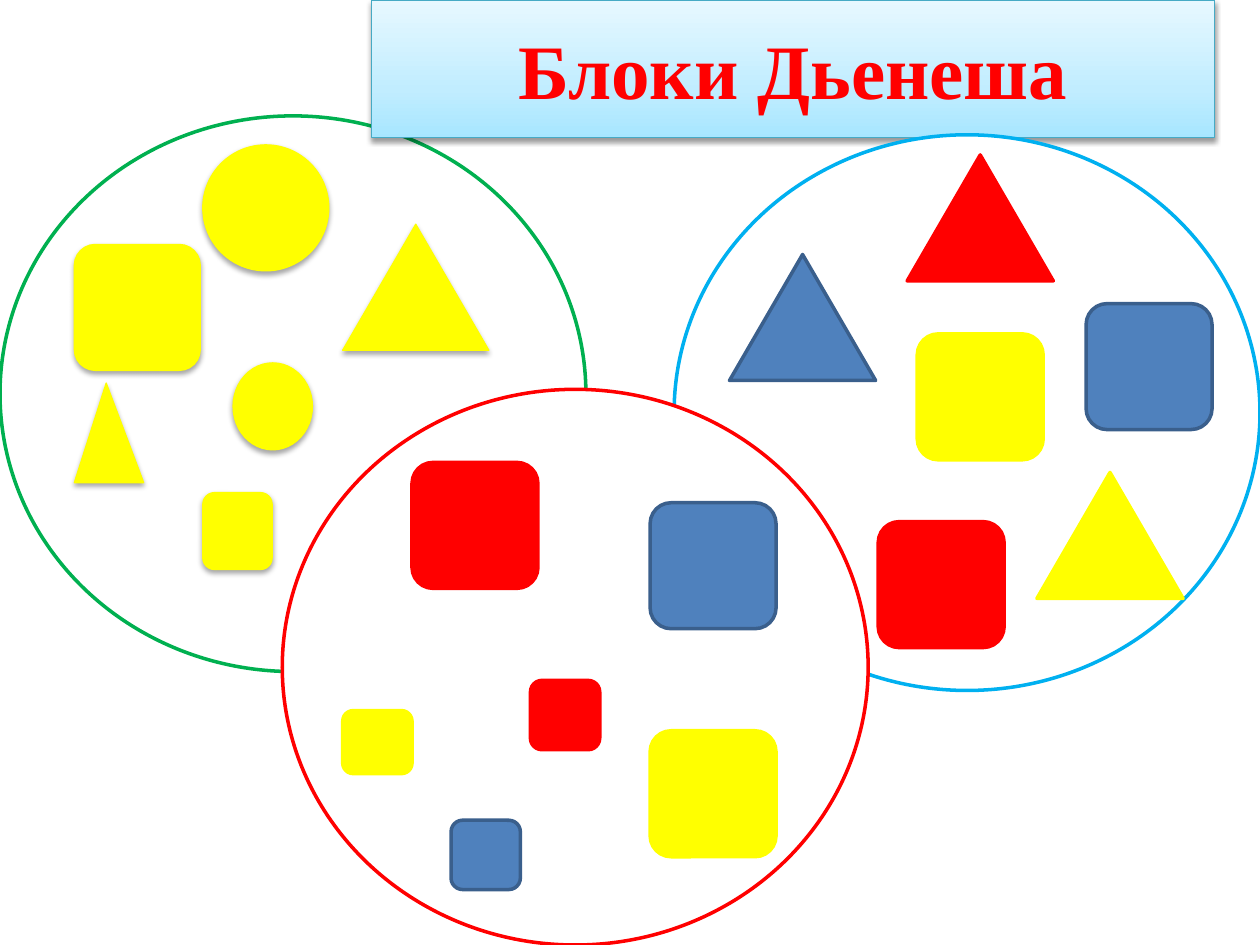
from dataclasses import dataclass
from typing import Optional

from lxml.etree import SubElement
from pptx import Presentation
from pptx.dml.color import RGBColor
from pptx.enum.shapes import MSO_SHAPE as Preset
from pptx.enum.text import MSO_ANCHOR as Anchor, PP_ALIGN as Align
from pptx.oxml.ns import qn
from pptx.util import Inches, Pt

# Grid of 100 columns by 75 rows
COLUMNS, ROWS = 100, 75
WIDTH, HEIGHT = Inches(10), Inches(7.5)

COLORS = {
    "white": "FFFFFF", "green": "00B050", "sky": "00B0F0",
    "red": "FF0000", "yellow": "FFFF00", "blue": "4F81BD",
    "blue edge": "3A5F8C", "title edge": "46AAC5",
    "title bottom": "A7E6FF", "title middle": "C1EDFF", "title top": "E7F8FF",
}

SQUARE, TRIANGLE, CIRCLE = Preset.ROUNDED_RECTANGLE, Preset.ISOSCELES_TRIANGLE, Preset.OVAL
BIG, SMALL, WIDE = (10, 10), (5.5, 5.5), (11.6, 10)
HOOP_SIZE = (46.5, 44.1)


@dataclass
class Hoop:
    color: str
    column: float
    row: float


@dataclass
class Block:
    kind: Preset
    color: str
    column: float
    row: float
    size: tuple = BIG
    apex: Optional[float] = None


GREEN_HOOP = Hoop("green", 0, 9.2)
SKY_HOOP = Hoop("sky", 53.5, 10.7)
RED_HOOP = Hoop("red", 22.4, 30.9)

YELLOW_BLOCKS = [
    Block(CIRCLE, "yellow", 16.1, 11.5),
    Block(SQUARE, "yellow", 5.9, 19.4),
    Block(SQUARE, "yellow", 16.1, 39.1, (5.5, 6.1)),
    Block(TRIANGLE, "yellow", 27.2, 17.8, WIDE),
    Block(TRIANGLE, "yellow", 5.9, 30.4, (5.5, 7.9), 0.46),
    Block(CIRCLE, "yellow", 18.5, 28.8, (6.3, 6.9)),
]
SQUARE_BLOCKS = [
    Block(SQUARE, "yellow", 51.6, 58),
    Block(SQUARE, "red", 32.7, 36.7),
    Block(SQUARE, "yellow", 27.2, 56.4, (5.5, 5)),
    Block(SQUARE, "red", 42.1, 54, SMALL),
    Block(SQUARE, "blue", 35.8, 65.1, SMALL),
    Block(SQUARE, "blue", 51.6, 39.9),
]
LARGE_BLOCKS = [
    Block(SQUARE, "yellow", 72.8, 26.5),
    Block(TRIANGLE, "blue", 57.9, 20.2, WIDE),
    Block(SQUARE, "blue", 86.2, 24.1),
    Block(SQUARE, "red", 69.7, 41.4),
    Block(TRIANGLE, "yellow", 82.3, 37.5, WIDE),
    Block(TRIANGLE, "red", 72, 12.3, WIDE),
]


def rgb(name: str) -> RGBColor:
    return RGBColor.from_string(COLORS[name])


def grid_box(column: float, row: float, size: tuple) -> dict:
    columns, rows = size
    return {
        "left": round(WIDTH * column / COLUMNS),
        "top": round(HEIGHT * row / ROWS),
        "width": round(WIDTH * columns / COLUMNS),
        "height": round(HEIGHT * rows / ROWS),
    }


def apply_format(target, values: dict) -> None:
    for name, value in values.items():
        setattr(target, name, value)


def set_line(shape, color: str, points: float) -> None:
    shape.line.color.rgb = rgb(color)
    shape.line.width = Pt(points)


def add_shadow(shape, opacity: int, distance: float) -> None:
    effects = shape._element.spPr.find(qn("a:effectLst"))
    shadow = SubElement(effects, qn("a:outerShdw"), blurRad=str(Pt(3.1)),
                        dist=str(Pt(distance)), dir="5400000", rotWithShape="0")
    color = SubElement(shadow, qn("a:srgbClr"), val="000000")
    SubElement(color, qn("a:alpha"), val=str(opacity * 1000))


def add_figure(slide, kind: Preset, box: dict, fill: str, edge: str, points: float):
    shape = slide.shapes.add_shape(kind, **box)
    shape.shadow.inherit = False
    shape.fill.solid()
    shape.fill.fore_color.rgb = rgb(fill)
    set_line(shape, edge, points)
    return shape


def draw_hoop(slide, hoop: Hoop) -> None:
    box = grid_box(hoop.column, hoop.row, HOOP_SIZE)
    add_figure(slide, CIRCLE, box, "white", hoop.color, 2)


def draw_blocks(slide, blocks: list, raised: bool = False) -> None:
    for block in blocks:
        edge = "blue edge" if block.color == "blue" else block.color
        box = grid_box(block.column, block.row, block.size)
        shape = add_figure(slide, block.kind, box, block.color, edge, 0.75 if raised else 2)
        if block.apex is not None:
            shape.adjustments[0] = block.apex
        if raised:
            add_shadow(shape, 35, 1.8)


def draw_title(slide, text: str) -> None:
    title = slide.shapes.title
    slide.shapes._spTree.append(title._element)  # above the green hoop
    apply_format(title, grid_box(29.5, 0, (66.9, 10.9)))

    # Gradient panel, from bottom to top
    title.fill.gradient()
    title.fill.gradient_angle = 90
    stops = title._element.spPr.find(qn("a:gradFill")).find(qn("a:gsLst"))
    stops.clear()
    for position, color in ((0, "title bottom"), (35, "title middle"), (100, "title top")):
        stop = SubElement(stops, qn("a:gs"), pos=str(position * 1000))
        SubElement(stop, qn("a:srgbClr"), val=COLORS[color])
    set_line(title, "title edge", 0.75)
    title.shadow.inherit = False
    add_shadow(title, 38, 1.6)

    # Heading text
    frame = title.text_frame
    frame.text = text
    frame.vertical_anchor = Anchor.MIDDLE
    paragraph = frame.paragraphs[0]
    paragraph.alignment = Align.CENTER
    font = paragraph.runs[0].font
    apply_format(font, {"name": "Times New Roman", "size": Pt(44), "bold": True})
    font.color.rgb = rgb("red")


def main() -> None:
    presentation = Presentation()
    apply_format(presentation, {"slide_width": WIDTH, "slide_height": HEIGHT})
    slide = presentation.slides.add_slide(presentation.slide_layouts[5])

    # Yellow blocks, with the heading over their hoop
    draw_hoop(slide, GREEN_HOOP)
    draw_title(slide, "Блоки Дьенеша")
    draw_blocks(slide, YELLOW_BLOCKS, raised=True)

    # The red hoop overlaps both of the others
    draw_hoop(slide, SKY_HOOP)
    draw_hoop(slide, RED_HOOP)
    draw_blocks(slide, SQUARE_BLOCKS)
    draw_blocks(slide, LARGE_BLOCKS)

    presentation.save("out.pptx")


if __name__ == "__main__":
    main()
